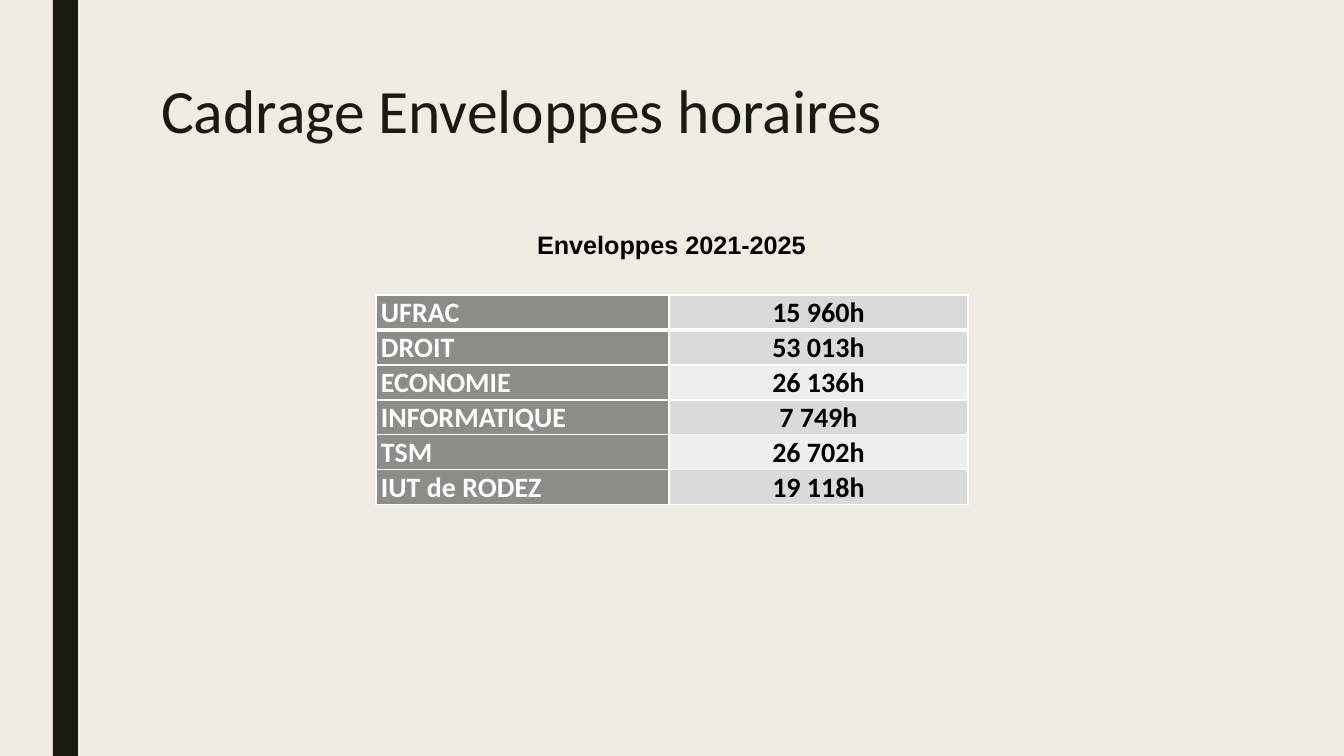
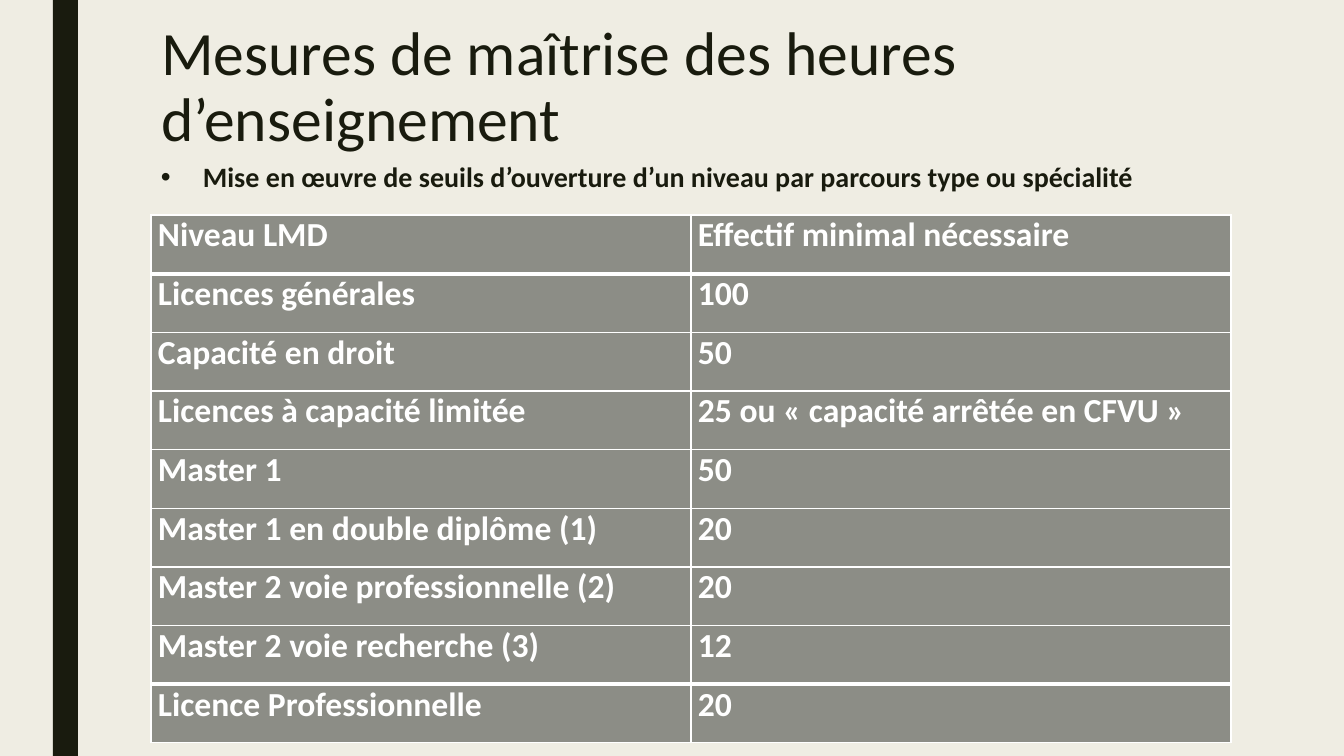
from lxml import etree
from pptx import Presentation
from pptx.dml.color import RGBColor
from pptx.enum.shapes import MSO_SHAPE
from pptx.enum.text import MSO_ANCHOR, MSO_AUTO_SIZE, PP_ALIGN
from pptx.oxml.ns import qn
from pptx.util import Emu, Pt

RECTANGLE = MSO_SHAPE.RECTANGLE
TOP, BOTTOM = MSO_ANCHOR.TOP, MSO_ANCHOR.BOTTOM
NO_AUTOFIT = MSO_AUTO_SIZE.NONE
LEFT, CENTER, JUSTIFY = PP_ALIGN.LEFT, PP_ALIGN.CENTER, PP_ALIGN.JUSTIFY

# Content
HOURS_TITLE = "Cadrage Enveloppes horaires"
HOURS_CAPTION = "Enveloppes 2021-2025"
HOURS_ROWS = [
    ("UFRAC", "15 960h"),
    ("DROIT", "53 013h"),
    ("ECONOMIE", "26 136h"),
    ("INFORMATIQUE", "7 749h"),
    ("TSM", "26 702h"),
    ("IUT de RODEZ", "19 118h"),
]
THRESHOLD_TITLE = "Mesures de maîtrise des heures d’enseignement"
THRESHOLD_BULLET = "Mise en œuvre de seuils d’ouverture d’un niveau par parcours type ou spécialité"
THRESHOLD_ROWS = [
    ("Niveau LMD", "Effectif minimal nécessaire"),
    ("Licences générales", "100"),
    ("Capacité en droit", "50"),
    ("Licences à capacité limitée", "25 ou « capacité arrêtée en CFVU »"),
    ("Master 1", "50"),
    ("Master 1 en double diplôme (1)", "20"),
    ("Master 2 voie professionnelle (2)", "20"),
    ("Master 2 voie recherche (3)", "12"),
    ("Licence Professionnelle", "20"),
]

# Shared style
COLOURS = {
    "page": "EFEDE3",
    "ink": "191B0E",
    "label": "8C8D86",
    "first": "D9D9D9",
    "odd": "DADBD9",
    "even": "EEEEED",
    "white": "FFFFFF",
    "black": "000000",
}
PAGE_WIDTH, PAGE_HEIGHT = 1344, 756
THIN, THICK = 1, 3


def px(length):
    return Emu(round(length * 914400 / 100.8))


def colour(name):
    return RGBColor.from_string(COLOURS[name])


def set_font(para, size, ink, bold=False, name="Calibri"):
    para.font.name = name
    para.font.size = Pt(size)
    para.font.bold = bold
    para.font.color.rgb = colour(ink)


def add_page(deck, title, top):
    """Add a title-only slide with the side band."""
    page = deck.slides.add_slide(deck.slide_layouts[5])
    band = page.shapes.add_shape(RECTANGLE, px(53), 0, px(25), px(PAGE_HEIGHT))
    band.shadow.inherit = False
    band.fill.solid()
    band.fill.fore_color.rgb = colour("ink")
    band.line.fill.background()

    box = page.shapes.title
    box.left, box.top, box.width, box.height = px(151), px(top), px(1058), px(163)
    frame = box.text_frame
    frame.text = title
    frame.word_wrap = True
    frame.auto_size = NO_AUTOFIT
    frame.vertical_anchor = TOP
    para = frame.paragraphs[0]
    para.alignment = LEFT
    para.line_spacing = 0.89
    set_font(para, 44, "ink")
    return page


def add_text(page, text, left, top, width, height, wrap=True):
    frame = page.shapes.add_textbox(px(left), px(top), px(width), px(height)).text_frame
    frame.word_wrap = wrap
    frame.text = text
    return frame.paragraphs[0]


def set_borders(cell, top, bottom):
    properties = cell._tc.get_or_add_tcPr()
    widths = {"a:lnL": THIN, "a:lnR": THIN, "a:lnT": top, "a:lnB": bottom}
    for position, (tag, width) in enumerate(widths.items()):
        line = etree.Element(qn(tag), w=str(Pt(width)))
        fill = etree.SubElement(line, qn("a:solidFill"))
        etree.SubElement(fill, qn("a:srgbClr"), val=COLOURS["white"])
        properties.insert(position, line)


def add_grid(page, rows, left, top, widths, height, size, inset, anchor, columns, thick_rules):
    """columns holds (alignment, ink, fill rule); thick_rules counts lines from the top."""
    grid = page.shapes.add_table(
        len(rows), len(widths), px(left), px(top), px(sum(widths)), px(height)
    ).table
    grid.first_row = grid.horz_banding = False
    for column, width in zip(grid.columns, widths):
        column.width = px(width)
    for r, texts in enumerate(rows):
        grid.rows[r].height = px(height / len(rows))
        upper, lower = (THICK if rule in thick_rules else THIN for rule in (r, r + 1))
        for c, (text, (alignment, ink, fill_rule)) in enumerate(zip(texts, columns)):
            cell = grid.cell(r, c)
            cell.text = text
            cell.margin_left = cell.margin_right = px(inset)
            cell.margin_top = cell.margin_bottom = 0
            cell.vertical_anchor = anchor
            cell.fill.solid()
            cell.fill.fore_color.rgb = colour(fill_rule(r))
            set_borders(cell, upper, lower)
            para = cell.text_frame.paragraphs[0]
            para.alignment = alignment
            set_font(para, size, ink, bold=True)


def label_fill(row):
    return "label"


def value_fill(row):
    if row == 0:
        return "first"
    return "odd" if row % 2 else "even"


def build_hours(deck):
    page = add_page(deck, HOURS_TITLE, 76)
    add_grid(
        page, HOURS_ROWS, 376, 295, [293, 299], 210, 20, 5, BOTTOM,
        [(LEFT, "white", label_fill), (CENTER, "black", value_fill)], {1},
    )
    caption = add_text(page, HOURS_CAPTION, 526, 224, 291, 40, wrap=False)
    caption.alignment = CENTER
    set_font(caption, 18, "black", bold=True, name="Arial")


def build_thresholds(deck):
    page = add_page(deck, THRESHOLD_TITLE, 18)
    bullet = add_text(page, THRESHOLD_BULLET, 151, 157, 1153, 44)
    bullet.line_spacing = 0.94
    properties = bullet._p.get_or_add_pPr()
    properties.set("marL", str(px(42)))
    properties.set("indent", str(px(-42)))
    etree.SubElement(properties, qn("a:buFont"), typeface="Arial")
    etree.SubElement(properties, qn("a:buChar"), char="•")
    set_font(bullet, 20, "ink", bold=True)
    add_grid(
        page, THRESHOLD_ROWS, 151, 215, [540, 540], 528, 24, 7, TOP,
        [(JUSTIFY, "white", label_fill)] * 2, {1, len(THRESHOLD_ROWS) - 1},
    )


def main():
    deck = Presentation()
    deck.slide_width, deck.slide_height = px(PAGE_WIDTH), px(PAGE_HEIGHT)
    background = deck.slide_master.background.fill
    background.solid()
    background.fore_color.rgb = colour("page")
    build_hours(deck)
    build_thresholds(deck)
    deck.save("out.pptx")


if __name__ == "__main__":
    main()
